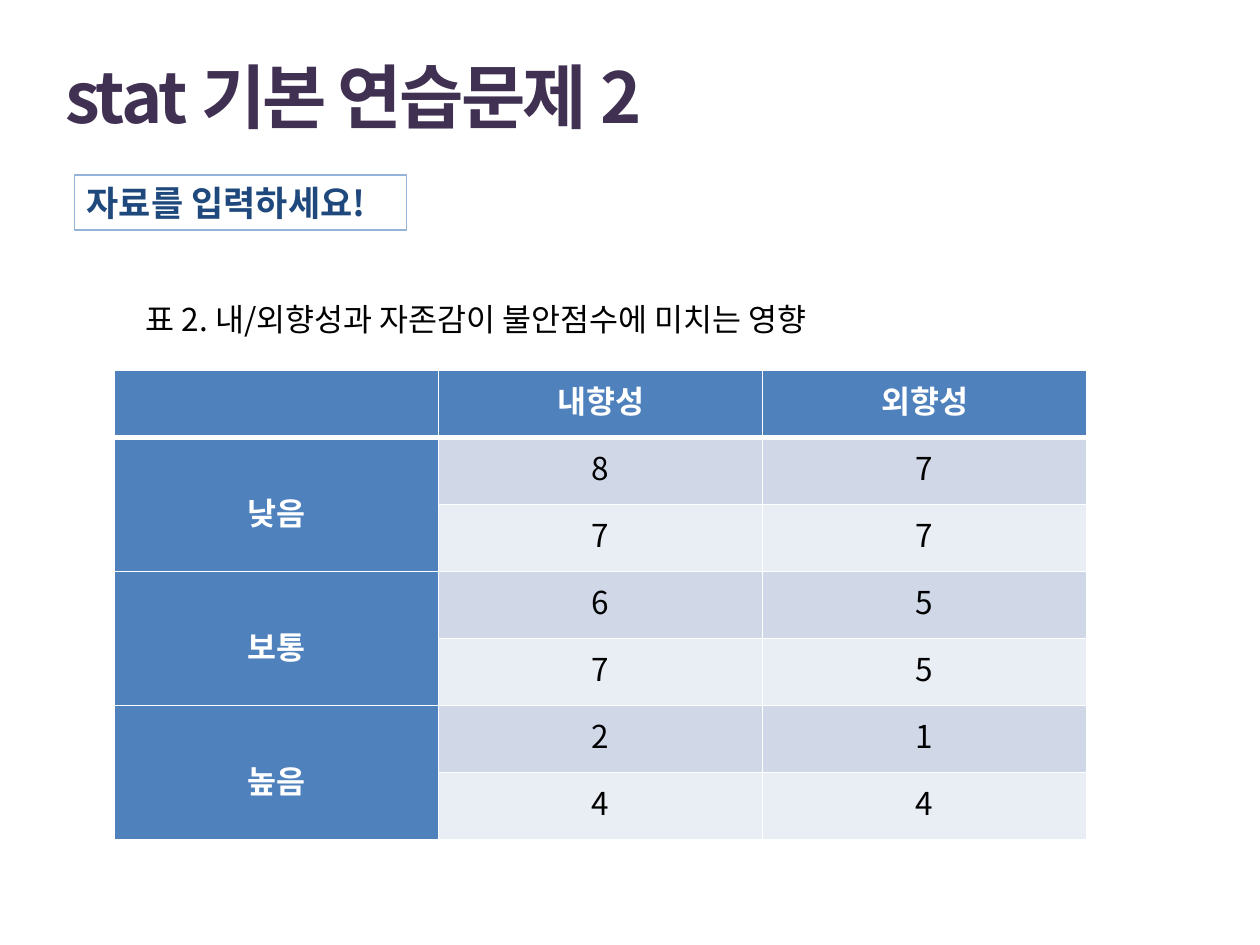
"""Build a slide with a heading, an instruction box and a table of anxiety scores."""
from lxml import etree
from pptx import Presentation
from pptx.dml.color import RGBColor
from pptx.enum import shapes, text
from pptx.oxml import ns
from pptx.util import Pt

FONT = "Noto Sans CJK KR"
WHITE = RGBColor(0xFF, 0xFF, 0xFF)
BLACK = RGBColor(0, 0, 0)
PURPLE = RGBColor(0x40, 0x31, 0x52)
NAVY = RGBColor(0x1F, 0x49, 0x7D)
PALE_BLUE = RGBColor(0x95, 0xB3, 0xD7)
BLUE = RGBColor(0x4F, 0x81, 0xBD)
BANDS = (RGBColor(0xD0, 0xD8, 0xE8), RGBColor(0xE9, 0xED, 0xF4))

HEADERS = ("", "내향성", "외향성")
GROUPS = (
    ("낮음", ((8, 7), (7, 7))),
    ("보통", ((6, 5), (7, 5))),
    ("높음", ((2, 1), (4, 4))),
)


def add_run(tf, words, size, color, bold=False, align=text.PP_ALIGN.LEFT):
    p = tf.paragraphs[0]
    p.alignment = align
    r = p.add_run()
    r.text = words
    r.font.size, r.font.bold, r.font.name = Pt(size), bold, FONT
    r.font.color.rgb = color
    etree.SubElement(r.font._element, ns.qn("a:ea"), typeface=FONT)
    return r


def place(sp, left, top, width, height):
    sp.left, sp.top, sp.width, sp.height = map(Pt, (left, top, width, height))


def add_title(s, words):
    sp = s.shapes.title
    place(sp, 30.24, 31.68, 550.8, 46.08)
    tf = sp.text_frame
    tf.auto_size = text.MSO_AUTO_SIZE.NONE
    tf.vertical_anchor = text.MSO_ANCHOR.MIDDLE
    r = add_run(tf, words, 40, PURPLE, bold=True)
    r.font._element.set("spc", "-150")


def add_instruction(s, words):
    sp = s.shapes.add_shape(shapes.MSO_SHAPE.RECTANGLE, Pt(42.48), Pt(100), Pt(190), Pt(31.5))
    sp.shadow.inherit = False
    sp.fill.background()
    sp.line.color.rgb = PALE_BLUE
    sp.line.width = Pt(0.75)
    sp.text_frame.vertical_anchor = text.MSO_ANCHOR.TOP
    sp.text_frame.word_wrap = True
    add_run(sp.text_frame, words, 20, NAVY, bold=True)


def add_caption(s, words):
    sp = s.shapes.add_textbox(Pt(76.32), Pt(167.76), Pt(437.76), Pt(29))
    sp.text_frame.word_wrap = True
    add_run(sp.text_frame, words, 18, BLACK)


def set_borders(cell, top=1, bottom=1):
    tc_pr = cell._tc.get_or_add_tcPr()
    for i, (side, width) in enumerate((("L", 1), ("R", 1), ("T", top), ("B", bottom))):
        ln = etree.Element(ns.qn(f"a:ln{side}"), w=str(Pt(width)))
        fill = etree.SubElement(ln, ns.qn("a:solidFill"))
        etree.SubElement(fill, ns.qn("a:srgbClr"), val=str(WHITE))
        tc_pr.insert(i, ln)


def fill_cell(cell, words, fill, color, bold):
    cell.fill.solid()
    cell.fill.fore_color.rgb = fill
    if words:
        add_run(cell.text_frame, words, 18, color, bold, text.PP_ALIGN.CENTER)


def add_scores(s):
    row_count = 1 + sum(len(rows) for _, rows in GROUPS)
    frame = s.shapes.add_table(row_count, len(HEADERS), Pt(65.5), Pt(211.68), Pt(555.5), Pt(268.1))
    table = frame.table
    for row in table.rows:
        row.height = Pt(38.3)
    for c, words in enumerate(HEADERS):
        fill_cell(table.cell(0, c), words, BLUE, WHITE, True)
    r = 1
    for label, rows in GROUPS:
        head = table.cell(r, 0)
        head.merge(table.cell(r + len(rows) - 1, 0))
        fill_cell(head, label, BLUE, WHITE, True)
        head.vertical_anchor = text.MSO_ANCHOR.MIDDLE
        head.margin_top = Pt(12)
        for band, scores in zip(BANDS, rows):
            for c, score in enumerate(scores, 1):
                fill_cell(table.cell(r, c), str(score), band, BLACK, False)
            r += 1
    for r in range(row_count):
        for c in range(len(HEADERS)):
            set_borders(table.cell(r, c), 3 if r == 1 else 1, 3 if r == 0 else 1)


def main():
    prs = Presentation()
    prs.slide_width, prs.slide_height = Pt(720), Pt(540)
    s = prs.slides.add_slide(prs.slide_layouts[5])
    add_title(s, "stat 기본 연습문제 2")
    add_instruction(s, "자료를 입력하세요!")
    add_scores(s)
    add_caption(s, "표 2. 내/외향성과 자존감이 불안점수에 미치는 영향")
    prs.save("out.pptx")


if __name__ == "__main__":
    main()
